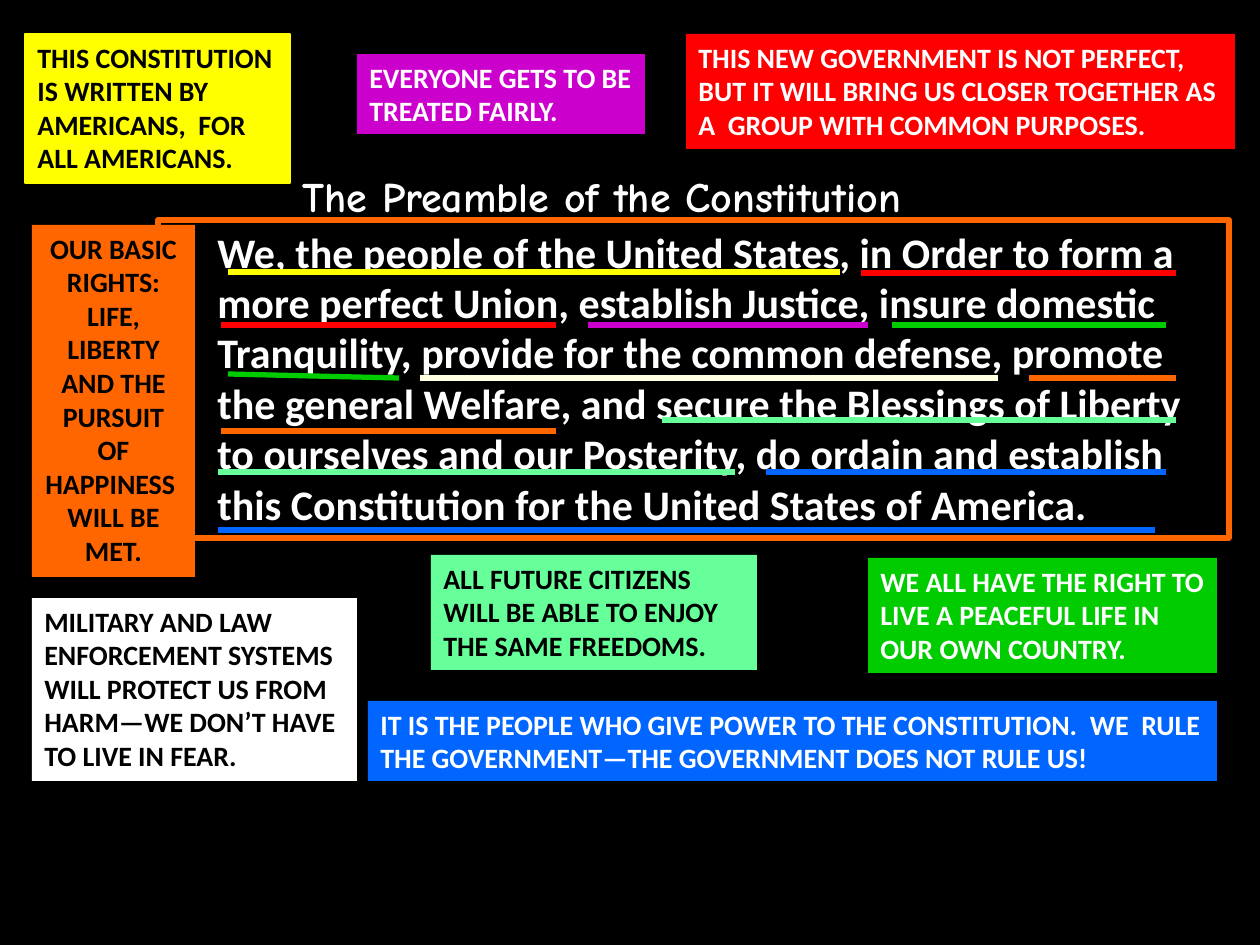
from dataclasses import dataclass

from lxml.etree import SubElement
from pptx import Presentation
from pptx.dml.color import RGBColor as Color
from pptx.enum.shapes import MSO_CONNECTOR as Connector, MSO_SHAPE as Shape
from pptx.enum.text import MSO_ANCHOR as Anchor, MSO_AUTO_SIZE as AutoSize, PP_ALIGN as Align
from pptx.oxml.ns import qn
from pptx.util import Emu, Pt

PX = 914400 / 126


@dataclass(frozen=True)
class Theme:
    black: str = "000000"
    white: str = "FFFFFF"
    yellow: str = "FFFF00"
    cream: str = "FFFFE2"
    green: str = "00CC00"
    purple: str = "CC00CC"
    red: str = "FF0000"
    orange: str = "FF6600"
    mint: str = "66FF99"
    blue: str = "0066FF"
    body_font: str = "Calibri"
    title_font: str = "Comic Neue"
    large: int = 24
    small: int = 16
    rule: float = 3
    hairline: float = 0.75


theme = Theme()


def px(*lengths):
    return [Emu(round(length * PX)) for length in lengths]


def write(shape, text, color, size, align=Align.LEFT, font_name=theme.body_font, underline=None):
    """Fill a shape with one bold, top-anchored, wrapping paragraph and return it."""
    frame = shape.text_frame
    frame.text = text
    frame_format = {"word_wrap": True, "auto_size": AutoSize.SHAPE_TO_FIT_TEXT,
                    "vertical_anchor": Anchor.TOP}
    for name, value in frame_format.items():
        setattr(frame, name, value)
    paragraph = frame.paragraphs[0]
    paragraph.alignment = align
    font = paragraph.runs[0].font
    font_format = {"name": font_name, "size": Pt(size), "bold": True, "underline": underline}
    for name, value in font_format.items():
        setattr(font, name, value)
    font.color.rgb = Color.from_string(color)
    return paragraph


presentation = Presentation()
presentation.slide_width, presentation.slide_height = px(1260, 945)
slide = presentation.slides.add_slide(presentation.slide_layouts[5])
slide.background.fill.solid()
slide.background.fill.fore_color.rgb = Color.from_string(theme.black)

# Title
title = slide.shapes.title
title.left, title.top, title.width, title.height = px(290, 164, 810, 63)
write(title, "The Preamble of the Constitution", theme.white, theme.large,
      font_name=theme.title_font, underline=True)

# Preamble
preamble = slide.shapes.add_shape(Shape.RECTANGLE, *px(158, 220, 1071, 318))
preamble.shadow.inherit = False
preamble.fill.background()
preamble.line.color.rgb = Color.from_string(theme.orange)
preamble.line.width = Pt(theme.rule)
preamble_paragraph = write(
    preamble,
    "We, the people of the United States, in Order to form a more perfect Union, "
    "establish Justice, insure domestic Tranquility, provide for the common defense, "
    "promote the general Welfare, and secure the Blessings of Liberty to ourselves and "
    "our Posterity, do ordain and establish this Constitution for the United States of "
    "America.",
    theme.white, theme.large)
[text_indent] = px(47)
properties = preamble_paragraph._p.get_or_add_pPr()
properties.set("marL", str(text_indent))
properties.set("indent", "0")

# Explanations: left, top, width, height, fill, text colour, alignment, text
explanations = [
    (25, 34, 265, 149, theme.yellow, theme.black, Align.LEFT,
     "THIS CONSTITUTION IS WRITTEN BY AMERICANS,  FOR ALL AMERICANS."),
    (868, 558, 349, 115, theme.green, theme.white, Align.LEFT,
     "WE ALL HAVE THE RIGHT TO LIVE A PEACEFUL LIFE IN OUR OWN COUNTRY."),
    (357, 54, 288, 80, theme.purple, theme.white, Align.LEFT,
     "EVERYONE GETS TO BE TREATED FAIRLY."),
    (32, 598, 325, 183, theme.white, theme.black, Align.LEFT,
     "MILITARY AND LAW ENFORCEMENT SYSTEMS WILL PROTECT US FROM HARM—WE DON’T HAVE "
     "TO LIVE IN FEAR."),
    (686, 34, 549, 115, theme.red, theme.white, Align.LEFT,
     "THIS NEW GOVERNMENT IS NOT PERFECT, BUT IT WILL BRING US CLOSER TOGETHER AS "
     "A  GROUP WITH COMMON PURPOSES."),
    (32, 225, 163, 352, theme.orange, theme.black, Align.CENTER,
     "OUR BASIC RIGHTS: LIFE, LIBERTY AND THE PURSUIT OF HAPPINESS  WILL BE MET."),
    (431, 555, 326, 115, theme.mint, theme.black, Align.LEFT,
     "ALL FUTURE CITIZENS WILL BE ABLE TO ENJOY THE SAME FREEDOMS."),
    (368, 701, 849, 80, theme.blue, theme.white, Align.LEFT,
     "IT IS THE PEOPLE WHO GIVE POWER TO THE CONSTITUTION.  WE  RULE THE "
     "GOVERNMENT—THE GOVERNMENT DOES NOT RULE US!"),
]
for left, top, width, height, fill, color, align, text in explanations:
    box = slide.shapes.add_shape(Shape.RECTANGLE, *px(left, top, width, height))
    box.shadow.inherit = False
    box.fill.solid()
    box.fill.fore_color.rgb = Color.from_string(fill)
    if fill == theme.yellow:
        box.line.color.rgb = Color.from_string(fill)
        box.line.width = Pt(theme.hairline)
    else:
        box.line.fill.background()
    write(box, text, color, theme.small, align)

# Underlines, in reading order: start x, start y, end x, end y, colour
underlines = [
    (228, 272, 840, 272, theme.yellow),
    (861, 273, 1176, 273, theme.red),
    (221, 325, 556, 325, theme.red),
    (588, 325, 868, 325, theme.purple),
    (892, 325, 1166, 325, theme.green),
    (228, 374, 399, 378, theme.green),
    (420, 378, 998, 378, theme.cream),
    (1029, 378, 1176, 378, theme.orange),
    (221, 431, 556, 431, theme.orange),
    (662, 420, 1176, 420, theme.mint),
    (218, 472, 735, 472, theme.mint),
    (766, 472, 1166, 472, theme.blue),
    (218, 530, 1155, 530, theme.blue),
]
for *ends, color in underlines:
    underline = slide.shapes.add_connector(Connector.STRAIGHT, *px(*ends))
    underline.line.color.rgb = Color.from_string(color)
    underline.line.width = Pt(theme.rule)
    SubElement(underline._element.spPr, qn("a:effectLst"))

presentation.save("out.pptx")
